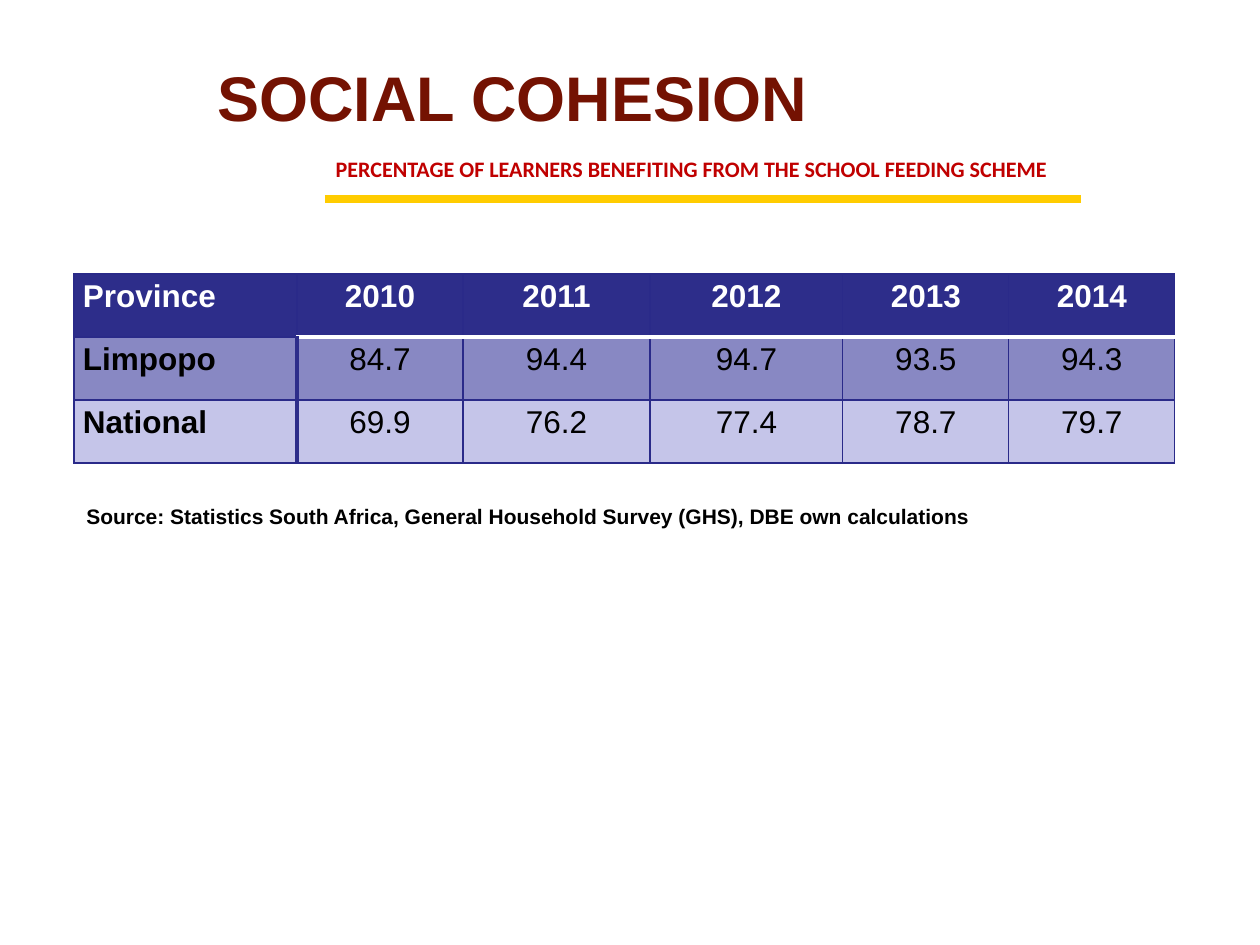
from lxml import etree
from pptx import Presentation
from pptx.dml.color import RGBColor
from pptx.enum import shapes, text
from pptx.oxml.ns import qn
from pptx.util import Inches, Pt

NAVY, EDGE, WHITE, BLACK = "2D2D8A", "2A2A89", "FFFFFF", "000000"
THIN, HEADER_RULE, COLUMN_RULE = (EDGE, 0.75), (WHITE, 2), (NAVY, 2)
BAND_FILLS = ["8888C3", "C5C5E9"]
COLUMN_WIDTHS = [223, 166, 187, 193, 166, 166]
ROW_HEIGHT = 63
ROWS = [
    ["Province", "2010", "2011", "2012", "2013", "2014"],
    ["Limpopo", "84.7", "94.4", "94.7", "93.5", "94.3"],
    ["National", "69.9", "76.2", "77.4", "78.7", "79.7"],
]


def px(n):
    return Inches(n / 126)


def rgb(value):
    return RGBColor.from_string(value)


class Deck:
    """Hold the style and the current slide, and draw each kind of element."""

    def __init__(self, width, height):
        self.prs = Presentation()
        self.prs.slide_width, self.prs.slide_height = px(width), px(height)
        self.s = self.prs.slides.add_slide(self.prs.slide_layouts[5])

    def add_text(self, p, words, size, color, bold=True, font="Arial"):
        r = p.add_run()
        r.text = words
        r.font.name, r.font.size, r.font.bold = font, Pt(size), bold
        r.font.color.rgb = rgb(color)

    def fill_frame(self, sp, words, size, color, top=6, wrap=True, **style):
        tf = sp.text_frame
        tf.word_wrap = wrap
        tf.auto_size = text.MSO_AUTO_SIZE.NONE
        tf.vertical_anchor = text.MSO_ANCHOR.TOP
        tf.margin_top = px(top)
        p = tf.paragraphs[0]
        p.alignment = text.PP_ALIGN.LEFT
        self.add_text(p, words, size, color, **style)

    def title(self, x, y, w, h, words, size, color, **style):
        sp = self.s.shapes.title
        sp.left, sp.top, sp.width, sp.height = px(x), px(y), px(w), px(h)
        self.fill_frame(sp, words, size, color, **style)

    def label(self, x, y, w, h, words, size, color, **style):
        sp = self.s.shapes.add_textbox(px(x), px(y), px(w), px(h))
        self.fill_frame(sp, words, size, color, **style)

    def rule(self, x1, x2, y, color, width):
        line = self.s.shapes.add_connector(
            shapes.MSO_CONNECTOR.STRAIGHT, px(x1), px(y), px(x2), px(y))
        line.line.color.rgb, line.line.width = rgb(color), Pt(width)
        etree.SubElement(line._element.spPr, qn("a:effectLst"))

    def borders(self, cell, *edges):
        tcPr = cell._tc.get_or_add_tcPr()
        for i, (side, (color, width)) in enumerate(zip("LRTB", edges)):
            ln = etree.Element(qn(f"a:ln{side}"), w=str(Pt(width)))
            fill = etree.SubElement(ln, qn("a:solidFill"))
            etree.SubElement(fill, qn("a:srgbClr"), val=color)
            tcPr.insert(i, ln)

    def cell(self, cell, words, fill, color, bold, centred):
        cell.fill.solid()
        cell.fill.fore_color.rgb = rgb(fill)
        cell.margin_left = cell.margin_right = px(9)
        cell.margin_top = cell.margin_bottom = 0
        p = cell.text_frame.paragraphs[0]
        p.line_spacing = 1.15
        p.alignment = text.PP_ALIGN.CENTER if centred else text.PP_ALIGN.LEFT
        self.add_text(p, words, 18, color, bold)

    def table(self, x, y, widths, row_height, rows):
        frame = self.s.shapes.add_table(
            len(rows), len(widths), px(x), px(y),
            px(sum(widths)), px(row_height * len(rows)))
        table = frame.table
        for column, width in zip(table.columns, widths):
            column.width = px(width)
        for i, row in enumerate(rows):
            table.rows[i].height = px(row_height)
            for j, words in enumerate(row):
                head, first = i == 0, j == 0
                cell = table.cell(i, j)
                self.cell(cell, words, NAVY if head else BAND_FILLS[i - 1],
                          WHITE if head else BLACK, head or first, not first)
                self.borders(
                    cell,
                    COLUMN_RULE if j == 1 and not head else THIN,
                    COLUMN_RULE if first and not head else THIN,
                    HEADER_RULE if i == 1 and not first else THIN,
                    HEADER_RULE if head and not first else THIN)


def main():
    deck = Deck(1260, 945)
    deck.rule(325, 1081, 199, "FFCC00", 4.5)
    deck.title(323, 155, 1134, 50,
               "PERCENTAGE OF LEARNERS BENEFITING FROM THE SCHOOL FEEDING SCHEME",
               12.6, "C00000", top=0, font="Calibri")
    deck.label(74, 498, 917, 38,
               "Source: Statistics South Africa, General Household Survey (GHS), "
               "DBE own calculations", 12, BLACK, wrap=False)
    deck.table(74, 274, COLUMN_WIDTHS, ROW_HEIGHT, ROWS)
    deck.label(205, 45, 1052, 89, "SOCIAL COHESION", 36, "741202", top=14)
    deck.prs.save("out.pptx")


if __name__ == "__main__":
    main()
